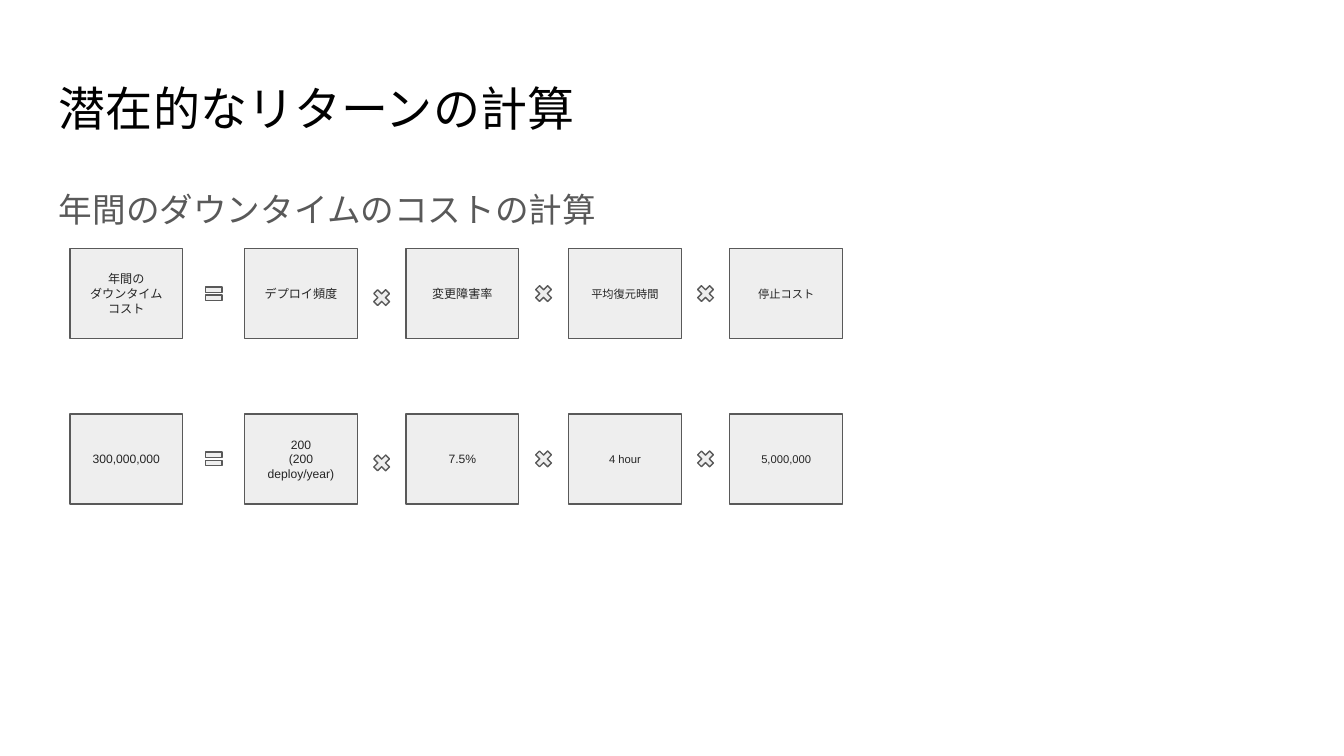
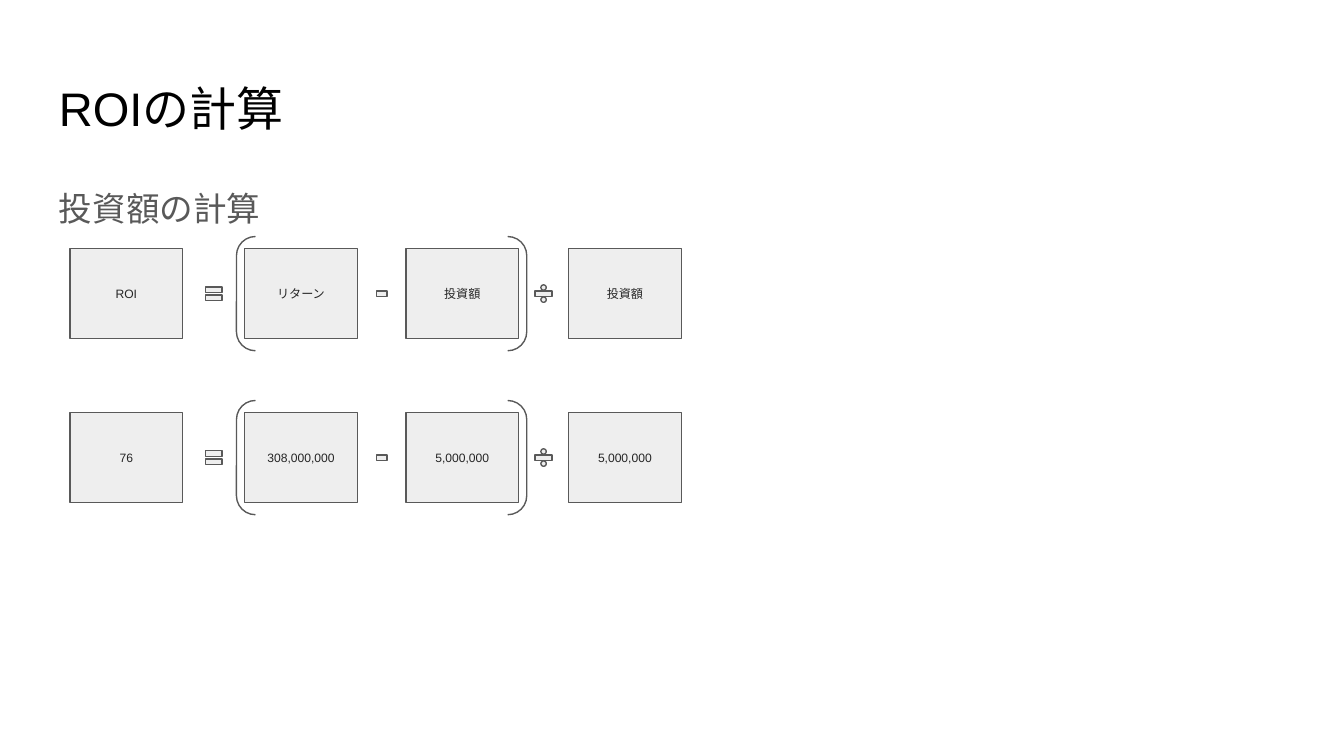
from dataclasses import dataclass

from lxml.etree import SubElement
from pptx import Presentation
from pptx.dml.color import RGBColor
from pptx.enum.shapes import MSO_SHAPE as Shape
from pptx.enum.text import MSO_ANCHOR as Anchor, PP_ALIGN as Align
from pptx.oxml.ns import qn
from pptx.util import Inches, Pt


@dataclass(frozen=True)
class Theme:
    font: str = "Arial"
    title_color: str = "000000"
    muted: str = "595959"  # headings, outlines and brackets
    term_color: str = "252525"
    term_fill: str = "EEEEEE"
    title_size: float = 25.2
    heading_size: float = 18
    term_size: float = 6.5
    small_term_size: float = 6
    line_width: float = 0.75


THEME = Theme()

# Equation grid, in inches
TERM_LEFTS = (0.52, 1.82, 3.02, 4.23, 5.43)
TERM_W, TERM_H = 0.84, 0.67
FORMULA_TOP = 1.85
OPERATOR_SIZE = 0.17
BRACKET_PAD_X, BRACKET_PAD_Y = 0.06, 0.09

# Operator symbol: preset shape and width
OPERATORS = {
    "=": (Shape.MATH_EQUAL, OPERATOR_SIZE),
    "×": (Shape.MATH_MULTIPLY, OPERATOR_SIZE),
    "-": (Shape.MATH_MINUS, 0.11),
    "÷": (Shape.MATH_DIVIDE, OPERATOR_SIZE),
}

FRAME_FORMAT = {
    "word_wrap": True,
    "margin_left": Inches(0.1),
    "margin_right": Inches(0.1),
    "margin_top": Inches(0.1),
    "margin_bottom": Inches(0.1),
}


def apply_format(target, values):
    for attribute, value in values.items():
        setattr(target, attribute, value)


def write_text(frame, text, size, color, anchor=Anchor.TOP, **paragraph_format):
    """Fill a text frame, one paragraph per line of text."""
    apply_format(frame, FRAME_FORMAT | {"vertical_anchor": anchor})
    for index, line in enumerate(text.split("\n")):
        paragraph = frame.add_paragraph() if index else frame.paragraphs[0]
        apply_format(paragraph, paragraph_format)
        run = paragraph.add_run()
        run.text = line
        apply_format(run.font, {"size": Pt(size), "name": THEME.font})
        run.font.color.rgb = RGBColor.from_string(color)
        east_asian = SubElement(run.font._element, qn("a:ea"))
        east_asian.set("typeface", THEME.font)


def add_text(slide, box, text, size, color, **paragraph_format):
    textbox = slide.shapes.add_textbox(*map(Inches, box))
    write_text(textbox.text_frame, text, size, color, **paragraph_format)


def add_outlined(slide, preset, box, filled=True):
    outlined = slide.shapes.add_shape(preset, *map(Inches, box))
    outlined.shadow.inherit = False
    if filled:
        outlined.fill.solid()
        outlined.fill.fore_color.rgb = RGBColor.from_string(THEME.term_fill)
    else:
        outlined.fill.background()
    outlined.line.color.rgb = RGBColor.from_string(THEME.muted)
    outlined.line.width = Pt(THEME.line_width)
    return outlined


def add_term(slide, column, top, text, size):
    term = add_outlined(slide, Shape.RECTANGLE,
                        (TERM_LEFTS[column], top, TERM_W, TERM_H))
    write_text(term.text_frame, text, size, THEME.term_color,
               Anchor.MIDDLE, alignment=Align.CENTER)


def add_operator(slide, gap, top, symbol, drop=0):
    """Centre an operator in the gap that follows a term."""
    preset, width = OPERATORS[symbol]
    center = (TERM_LEFTS[gap] + TERM_W + TERM_LEFTS[gap + 1]) / 2
    middle = top + TERM_H / 2 + drop
    add_outlined(slide, preset, (center - width / 2, middle - OPERATOR_SIZE / 2,
                                 width, OPERATOR_SIZE))


def add_brackets(slide, first, last, top):
    left = TERM_LEFTS[first] - BRACKET_PAD_X
    right = TERM_LEFTS[last] + TERM_W + BRACKET_PAD_X
    add_outlined(slide, Shape.DOUBLE_BRACKET,
                 (left, top - BRACKET_PAD_Y, right - left,
                  TERM_H + 2 * BRACKET_PAD_Y), filled=False)


def add_equation(slide, top, terms, operators, drops=None, small_from=None,
                 bracketed=None):
    for column, text in enumerate(terms):
        is_small = small_from is not None and column >= small_from
        add_term(slide, column, top, text,
                 THEME.small_term_size if is_small else THEME.term_size)
    for gap, symbol in enumerate(operators):
        add_operator(slide, gap, top, symbol, (drops or {}).get(gap, 0))
    if bracketed:
        add_brackets(slide, *bracketed, top)


def add_calculation(prs, title, heading, heading_top, values_top,
                    formula, values, operators, **layout):
    """One slide: title, heading, the formula and the same with values."""
    slide = prs.slides.add_slide(prs.slide_layouts[6])
    add_text(slide, (0.34, heading_top, 9.32, 3.74), heading,
             THEME.heading_size, THEME.muted,
             line_spacing=1.15, space_after=Pt(12))
    add_text(slide, (0.34, 0.49, 9.32, 0.63), title,
             THEME.title_size, THEME.title_color)
    for top, terms in ((FORMULA_TOP, formula), (values_top, values)):
        add_equation(slide, top, terms, operators, **layout)


def main():
    prs = Presentation()
    # Widescreen, 16:9
    prs.slide_width = Inches(10)
    prs.slide_height = Inches(10) * 9 // 16

    # Yearly cost of downtime
    add_calculation(
        prs, "潜在的なリターンの計算", "年間のダウンタイムのコストの計算", 1.26, 3.08,
        formula=("年間の\nダウンタイム\nコスト", "デプロイ頻度", "変更障害率",
                 "平均復元時間", "停止コスト"),
        values=("300,000,000", "200\n(200 deploy/year)", "7.5%", "4 hour",
                "5,000,000"),
        operators="=×××", drops={1: 0.03}, small_from=3)

    # Return on investment
    add_calculation(
        prs, "ROIの計算", "投資額の計算", 1.25, 3.07,
        formula=("ROI", "リターン", "投資額", "投資額"),
        values=("76", "308,000,000", "5,000,000", "5,000,000"),
        operators="=-÷", bracketed=(1, 2))

    prs.save("out.pptx")


if __name__ == "__main__":
    main()
